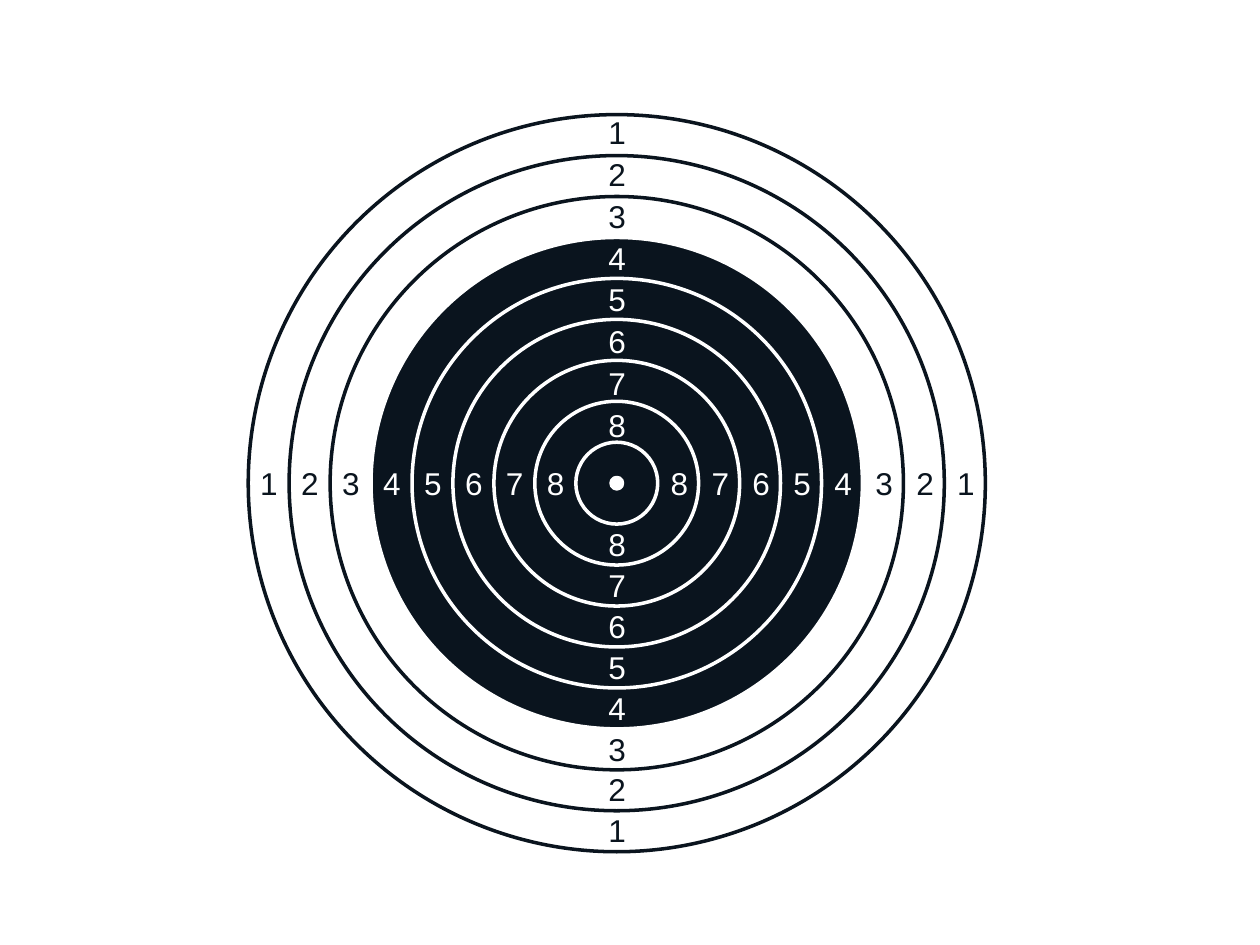
import pptx
import pptx.dml.color
import pptx.enum.shapes
import pptx.enum.text
import pptx.util

INK = pptx.dml.color.RGBColor(0x0A, 0x14, 0x1E)
WHITE = pptx.dml.color.RGBColor(0xFF, 0xFF, 0xFF)

RING = 0.325  # width of one scoring ring in inches, the grid unit
CENTER_X, CENTER_Y = 4.895, 3.835
FIRST_BLACK = 4  # rings from this score inwards are filled


class Target:
    """Draws on a grid of ring widths measured from the bullseye."""

    font = "Arial"
    size = pptx.util.Pt(18)
    line = pptx.util.Pt(2)
    label_w, label_h = 0.33, 0.4

    def __init__(self, slide):
        self.s = slide

    def box(self, col, row, width, height):
        """Inches of a box centred on a grid position."""
        left = CENTER_X + col * RING - width / 2
        top = CENTER_Y + row * RING - height / 2
        return [pptx.util.Inches(v) for v in (left, top, width, height)]

    def circle(self, radius, line, fill=None):
        d = 2 * radius * RING
        sp = self.s.shapes.add_shape(
            pptx.enum.shapes.MSO_SHAPE.OVAL, *self.box(0, 0, d, d))
        sp.shadow.inherit = False
        if fill is None:
            sp.fill.background()
        else:
            sp.fill.solid()
            sp.fill.fore_color.rgb = fill
        sp.line.color.rgb = line
        sp.line.width = self.line

    def label(self, score, col, row):
        sp = self.s.shapes.add_textbox(
            *self.box(col, row, self.label_w, self.label_h))
        tf = sp.text_frame
        tf.word_wrap = False
        tf.auto_size = pptx.enum.text.MSO_AUTO_SIZE.SHAPE_TO_FIT_TEXT
        tf.text = str(score)
        p = tf.paragraphs[0]
        p.alignment = pptx.enum.text.PP_ALIGN.CENTER
        r = p.runs[0]
        r.font.name = self.font
        r.font.size = self.size
        r.font.color.rgb = WHITE if score >= FIRST_BLACK else INK


def main():
    prs = pptx.Presentation()
    prs.slide_width = pptx.util.Inches(10)
    prs.slide_height = pptx.util.Inches(7.5)
    target = Target(prs.slides.add_slide(prs.slide_layouts[6]))

    # Black rings, then the open outer rings
    for score in range(FIRST_BLACK, 10):
        target.circle(10 - score, WHITE, INK)
    for score in range(FIRST_BLACK - 1, 0, -1):
        target.circle(10 - score, INK)

    # Scores on each arm: direction, distance of the 1, step between scores
    arms = [
        (0, -1, 8.57, 1.02),
        (0, 1, 8.48, 1),
        (1, 0, 8.52, 1),
        (-1, 0, 8.5, 1),
    ]
    for dx, dy, first, step in arms:
        for score in range(1, 9):
            distance = first - (score - 1) * step
            target.label(score, dx * distance, dy * distance)

    # Bullseye
    target.circle(0.14, WHITE, WHITE)

    prs.save("out.pptx")


if __name__ == "__main__":
    main()
